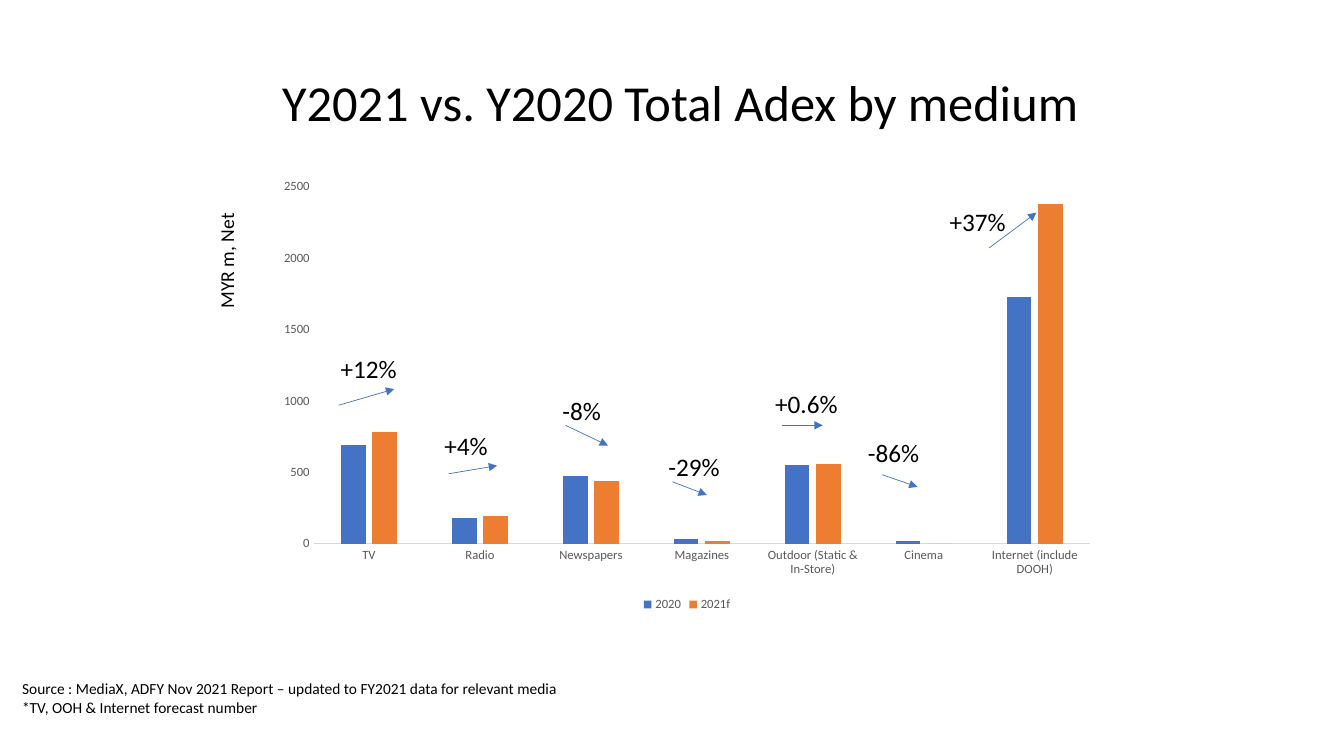
from dataclasses import dataclass

from lxml.etree import SubElement
from pptx import Presentation
from pptx.chart.data import CategoryChartData
from pptx.dml.color import RGBColor
from pptx.enum.chart import XL_CHART_TYPE as ChartType
from pptx.enum.chart import XL_LEGEND_POSITION as LegendPosition
from pptx.enum.chart import XL_TICK_MARK as TickMark
from pptx.enum.shapes import MSO_CONNECTOR as Connector
from pptx.enum.text import MSO_AUTO_SIZE as AutoSize
from pptx.oxml.ns import qn
from pptx.slide import Slide
from pptx.util import Inches, Pt

FONT = "Calibri"
BLACK = RGBColor(0x00, 0x00, 0x00)
GREY = RGBColor(0x59, 0x59, 0x59)
LIGHT_GREY = RGBColor(0xD9, 0xD9, 0xD9)
BLUE = RGBColor(0x44, 0x72, 0xC4)
ORANGE = RGBColor(0xED, 0x7D, 0x31)


@dataclass(frozen=True)
class Label:
    text: str
    left: float
    top: float
    width: float
    height: float
    size: float
    rotation: float = 0


@dataclass(frozen=True)
class Change:
    """A percentage change with its trend arrow."""
    text: str
    left: float
    top: float
    width: float
    start: tuple[float, float]
    end: tuple[float, float]


@dataclass(frozen=True)
class Year:
    name: str
    spend: tuple[int, ...]
    color: RGBColor


MEDIA = ("TV", "Radio", "Newspapers", "Magazines", "Outdoor (Static & In-Store)",
         "Cinema", "Internet (include DOOH)")
YEARS = (
    Year("2020", (690, 180, 470, 30, 550, 20, 1730), BLUE),
    Year("2021f", (780, 190, 440, 20, 560, 0, 2380), ORANGE),
)
LABELS = (
    Label("Y2021 vs. Y2020 Total Adex by medium", 2.7, 0.66, 8.33, 0.71, 36),
    Label("Source : MediaX, ADFY Nov 2021 Report – updated to FY2021 data for relevant media\n"
          "*TV, OOH & Internet forecast number", 0.12, 6.69, 5.61, 0.66, 11),
    Label("MYR m, Net", 1.67, 2.41, 1.16, 0.34, 14, 270),
)
CHANGES = (
    Change("+12%", 3.28, 3.46, 0.76, (3.36, 4.02), (3.91, 3.86)),
    Change("+4%", 4.31, 4.22, 0.64, (4.45, 4.7), (4.93, 4.62)),
    Change("-8%", 5.48, 3.87, 0.59, (5.61, 4.22), (6.03, 4.42)),
    Change("-29%", 6.53, 4.43, 0.72, (6.67, 4.78), (7.01, 4.91)),
    Change("+0.6%", 7.59, 3.8, 0.83, (7.76, 4.22), (8.16, 4.22)),
    Change("-86%", 8.51, 4.29, 0.72, (8.75, 4.71), (9.1, 4.83)),
    Change("+37%", 9.32, 2, 0.76, (9.81, 2.46), (10.28, 2.11)),
)


def set_font(font, size: float, color: RGBColor) -> None:
    for name, value in {"name": FONT, "size": Pt(size)}.items():
        setattr(font, name, value)
    font.color.rgb = color


def add_label(slide: Slide, label: Label) -> None:
    box = (label.left, label.top, label.width, label.height)
    sp = slide.shapes.add_textbox(*map(Inches, box))
    sp.rotation = label.rotation
    tf = sp.text_frame
    tf.text = label.text
    for name, value in {"word_wrap": False, "auto_size": AutoSize.SHAPE_TO_FIT_TEXT}.items():
        setattr(tf, name, value)
    for p in tf.paragraphs:
        for r in p.runs:
            set_font(r.font, label.size, BLACK)


def add_change(slide: Slide, change: Change) -> None:
    line = slide.shapes.add_connector(
        Connector.STRAIGHT, *map(Inches, change.start + change.end))
    line.line.color.rgb = BLUE
    line.line.width = Pt(0.5)
    SubElement(line.line._get_or_add_ln(), qn("a:tailEnd"), type="triangle")
    SubElement(line._element.spPr, qn("a:effectLst"))
    add_label(slide, Label(change.text, change.left, change.top, change.width, 0.4, 18))


def add_adex_chart(slide: Slide) -> None:
    data = CategoryChartData()
    data.categories = MEDIA
    for year in YEARS:
        data.add_series(year.name, year.spend)
    box = map(Inches, (2.65, 1.69, 8.33, 4.42))
    chart = slide.shapes.add_chart(ChartType.COLUMN_CLUSTERED, *box, data).chart
    set_font(chart.font, 10, BLACK)
    chart.has_title = False

    chart.has_legend = True
    chart.legend.position = LegendPosition.BOTTOM
    chart.legend.include_in_layout = False
    set_font(chart.legend.font, 9, GREY)

    axis_format = {"major_tick_mark": TickMark.NONE, "minor_tick_mark": TickMark.NONE,
                   "has_major_gridlines": False}
    for axis in (chart.category_axis, chart.value_axis):
        for name, value in axis_format.items():
            setattr(axis, name, value)
        set_font(axis.tick_labels.font, 9, GREY)
    chart.category_axis.format.line.color.rgb = LIGHT_GREY
    chart.category_axis.format.line.width = Pt(0.75)
    chart.value_axis.format.line.fill.background()

    plot = chart.plots[0]
    for name, value in {"gap_width": 219, "overlap": -27, "vary_by_categories": False}.items():
        setattr(plot, name, value)
    for series, year in zip(plot.series, YEARS):
        series.format.fill.solid()
        series.format.fill.fore_color.rgb = year.color


def main() -> None:
    prs = Presentation()
    prs.slide_width = Inches(13.33)
    prs.slide_height = Inches(7.5)
    slide = prs.slides.add_slide(prs.slide_layouts[6])
    add_adex_chart(slide)
    for label in LABELS:
        add_label(slide, label)
    for change in CHANGES:
        add_change(slide, change)
    prs.save("out.pptx")


if __name__ == "__main__":
    main()
